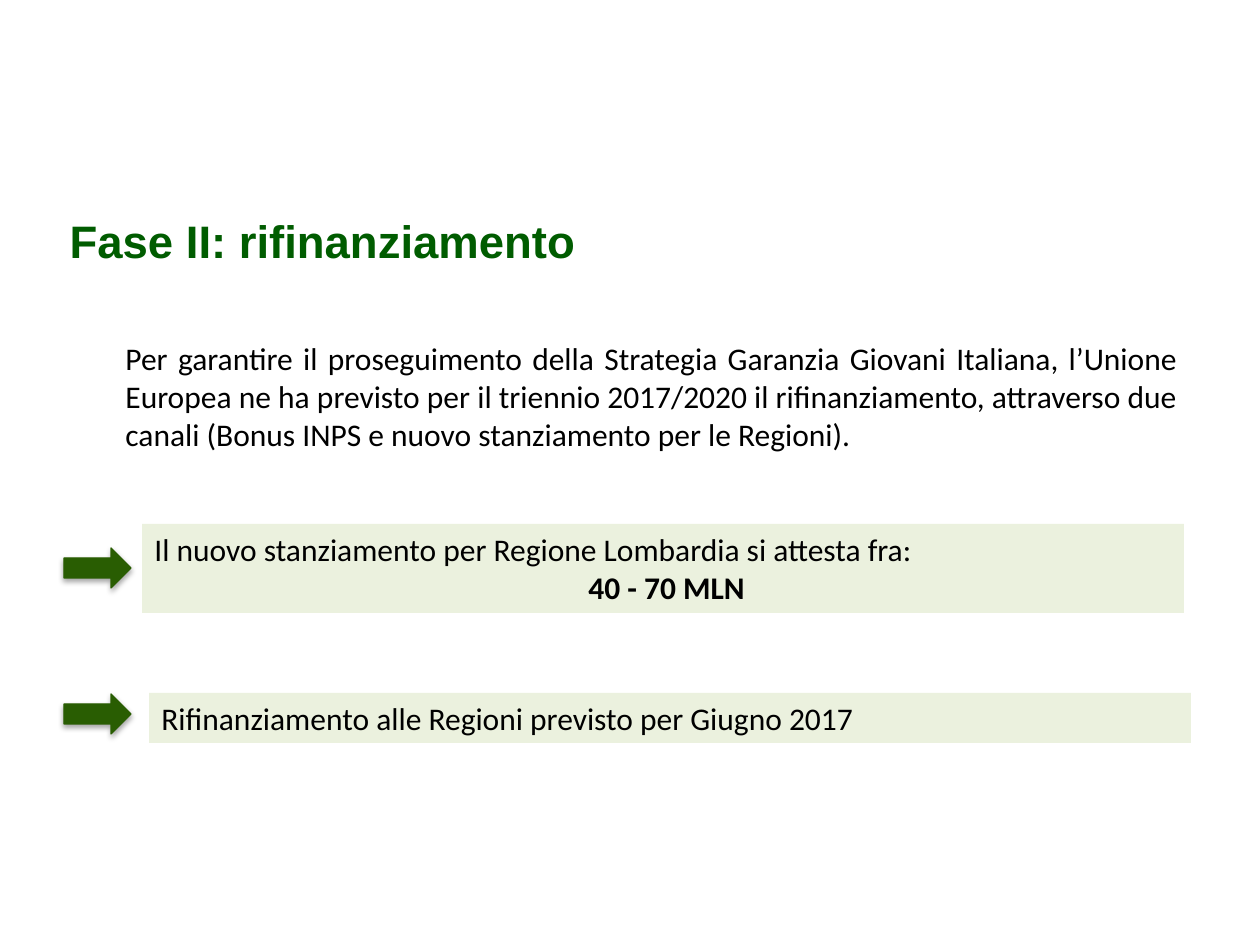
"""Build the slide on the refinancing of phase II."""
from lxml import etree
from pptx import Presentation
from pptx.dml.color import RGBColor
from pptx.enum.shapes import MSO_SHAPE
from pptx.enum.text import MSO_ANCHOR, PP_ALIGN
from pptx.oxml.ns import qn
from pptx.util import Emu, Pt

LEFT, CENTER, JUSTIFY = PP_ALIGN.LEFT, PP_ALIGN.CENTER, PP_ALIGN.JUSTIFY
TOP, MIDDLE = MSO_ANCHOR.TOP, MSO_ANCHOR.MIDDLE
RECT, ARROW = MSO_SHAPE.RECTANGLE, MSO_SHAPE.RIGHT_ARROW

COLORS = {"title": "005C00", "text": "000000", "panel": "EBF1DE", "arrow": "295D02"}
TITLE = "Fase II: rifinanziamento"
INTRO = (
    "Per garantire il proseguimento della Strategia Garanzia Giovani Italiana, "
    "l’Unione Europea ne ha previsto per il triennio 2017/2020 il rifinanziamento, "
    "attraverso due canali (Bonus INPS e nuovo stanziamento per le Regioni)."
)
PANELS = [
    {"box": (142, 524, 1042, 89), "arrow_top": 548, "lines": [
        (JUSTIFY, [("Il nuovo stanziamento per Regione Lombardia si attesta fra:", False)]),
        (CENTER, [(" ", False), ("40 - 70 MLN", True)])]},
    {"box": (149, 693, 1042, 50), "arrow_top": 694, "lines": [
        (JUSTIFY, [("Rifinanziamento alle Regioni previsto per Giugno 2017", False)])]},
]
ARROW_LEFT, ARROW_W, ARROW_H = 64, 67, 40


def px(n):
    return Emu(round(n * 914400 / 126))


def place(box):
    return [px(n) for n in box]


def color(name):
    return RGBColor.from_string(COLORS[name])


def write(tf, lines, size=18, font="Calibri", ink="text", anchor=TOP):
    tf.word_wrap = True
    tf.vertical_anchor = anchor
    for i, (align, runs) in enumerate(lines):
        p = tf.add_paragraph() if i else tf.paragraphs[0]
        p.alignment = align
        for text, bold in runs:
            r = p.add_run()
            r.text = text
            r.font.size, r.font.name, r.font.bold = Pt(size), font, bold
            r.font.color.rgb = color(ink)


def add_filled(s, kind, box, fill):
    sp = s.shapes.add_shape(kind, *place(box))
    sp.shadow.inherit = False
    sp.fill.solid()
    sp.fill.fore_color.rgb = color(fill)
    sp.line.fill.background()
    return sp


def add_arrow(s, top):
    sp = add_filled(s, ARROW, (ARROW_LEFT, top, ARROW_W, ARROW_H), "arrow")
    sp.line.color.rgb = color("arrow")
    sp.line.width = Pt(0.75)
    effects = sp._element.spPr.find(qn("a:effectLst"))
    shadow = etree.SubElement(effects, qn("a:outerShdw"), blurRad="40000",
                              dist="23000", dir="5400000", rotWithShape="0")
    tint = etree.SubElement(shadow, qn("a:srgbClr"), val="000000")
    etree.SubElement(tint, qn("a:alpha"), val="35000")


def main():
    prs = Presentation()
    prs.slide_width, prs.slide_height = px(1260), px(945)
    s = prs.slides.add_slide(prs.slide_layouts[5])

    title = s.shapes.title
    title.left, title.top, title.width, title.height = place((57, 202, 1134, 77))
    write(title.text_frame, [(LEFT, [(TITLE, True)])], 26, "Arial", "title", MIDDLE)

    tf = s.shapes.add_textbox(*place((113, 295, 1077, 585))).text_frame
    tf.margin_top = px(44)
    write(tf, [(JUSTIFY, [(INTRO, False)])])

    for panel in PANELS:
        sp = add_filled(s, RECT, panel["box"], "panel")
        write(sp.text_frame, panel["lines"])
        add_arrow(s, panel["arrow_top"])
    prs.save("out.pptx")


if __name__ == "__main__":
    main()
